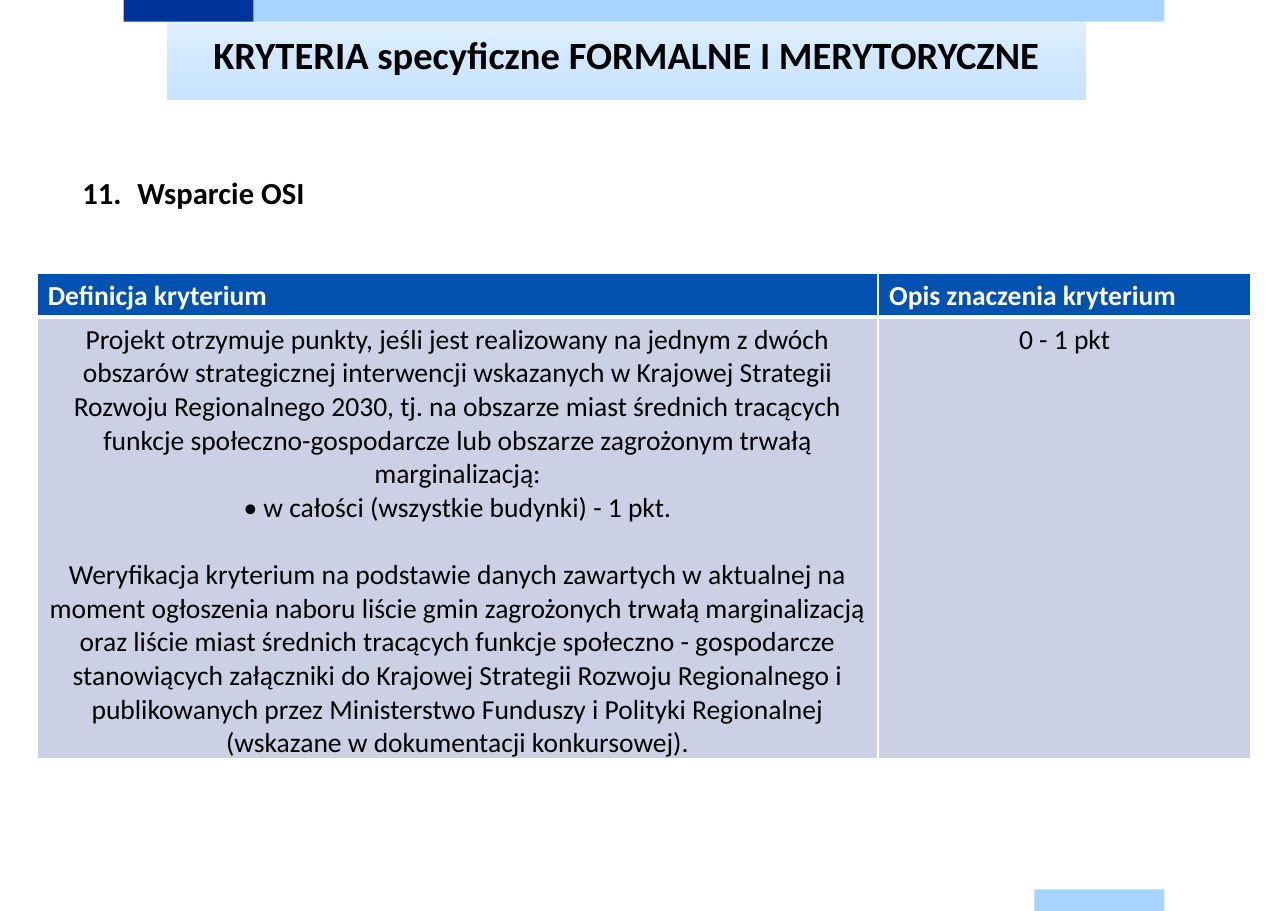
"""Slide with the criterion "Wsparcie OSI": title band, numbered heading and criteria table."""
from copy import deepcopy

from pptx import Presentation
from pptx import util as u
from pptx.dml.color import RGBColor
from pptx.enum import shapes, text
from pptx.oxml import parse_xml
from pptx.oxml.ns import nsdecls, qn

COLOURS = {
    "navy": "003399", "sky": "A6D3FF", "header": "0051B0", "body": "CCD0E4",
    "white": "FFFFFF", "black": "000000",
    "band_top": "E1F0FF", "band_middle": "D0E7FF", "band_bottom": "CAE4FF",
}


def add_run(paragraph, words, size, colour="black", bold=False):
    run = paragraph.add_run()
    run.text = words
    run.font.name = "Calibri"
    run.font.size = u.Pt(size)
    run.font.bold = bold
    run.font.color.rgb = RGBColor.from_string(COLOURS[colour])


def add_bar(left, top, width, height):
    bar = slide.shapes.add_shape(
        shapes.MSO_SHAPE.RECTANGLE, u.Cm(left), u.Cm(top), u.Cm(width), u.Cm(height))
    bar.shadow.inherit = False
    bar.line.fill.background()
    return bar


deck = Presentation()
deck.slide_width, deck.slide_height = u.Cm(29.7), u.Cm(21)
slide = deck.slides.add_slide(deck.slide_layouts[6])

for left, top, width, colour in [
    (2.85, 0, 3, "navy"), (5.85, 0, 21, "sky"), (23.85, 20.5, 3, "sky"),
]:
    strip = add_bar(left, top, width, 0.5)
    strip.fill.solid()
    strip.fill.fore_color.rgb = RGBColor.from_string(COLOURS[colour])

title = add_bar(3.85, 0.5, 21.2, 1.8)
title.fill.gradient()
title.fill.gradient_angle = 270
stop_list = title._element.spPr.find(".//" + qn("a:gsLst"))
stop_list.insert(1, deepcopy(stop_list[0]))
band_colours = ["band_top", "band_middle", "band_bottom"]
for stop, colour, position in zip(title.fill.gradient_stops, band_colours, [0, 0.5, 1]):
    stop.color.rgb = RGBColor.from_string(COLOURS[colour])
    stop.position = position
title_frame = title.text_frame
title_frame.word_wrap = True
title_frame.vertical_anchor = text.MSO_ANCHOR.TOP
title_frame.margin_left = title_frame.margin_right = 0
title_frame.margin_top = title_frame.margin_bottom = 0
title_line = title_frame.paragraphs[0]
title_line.alignment = text.PP_ALIGN.CENTER
title_line.line_spacing = u.Pt(36)
add_run(title_line, "KRYTERIA specyficzne FORMALNE I MERYTORYCZNE", 25.2, bold=True)

heading = slide.shapes.add_textbox(u.Cm(1.65), u.Cm(3.89), u.Cm(26.4), u.Cm(1.2))
heading.text_frame.word_wrap = True
criterion = heading.text_frame.paragraphs[0]
numbering = criterion._p.get_or_add_pPr()
numbering.set("marL", str(u.Cm(1.27)))
numbering.set("indent", str(-u.Cm(1.27)))
numbering.append(parse_xml(
    f'<a:buFont {nsdecls("a")} typeface="+mj-lt"/>'))
numbering.append(parse_xml(
    f'<a:buAutoNum {nsdecls("a")} type="arabicPeriod" startAt="11"/>'))
add_run(criterion, "Wsparcie OSI", 20, bold=True)

definition = [
    "Projekt otrzymuje punkty, jeśli jest realizowany na jednym z dwóch obszarów "
    "strategicznej interwencji wskazanych w Krajowej Strategii Rozwoju Regionalnego 2030, "
    "tj. na obszarze miast średnich tracących funkcje społeczno-gospodarcze lub obszarze "
    "zagrożonym trwałą marginalizacją:",
    "• w całości (wszystkie budynki) - 1 pkt.",
    "Weryfikacja kryterium na podstawie danych zawartych w aktualnej na moment ogłoszenia "
    "naboru liście gmin zagrożonych trwałą marginalizacją oraz liście miast średnich "
    "tracących funkcje społeczno - gospodarcze stanowiących załączniki do Krajowej Strategii "
    "Rozwoju Regionalnego i publikowanych przez Ministerstwo Funduszy i Polityki Regionalnej "
    "(wskazane w dokumentacji konkursowej).",
]
rows = [
    [["Definicja kryterium"], ["Opis znaczenia kryterium"]],
    [definition, ["0 - 1 pkt"]],
]
criteria = slide.shapes.add_table(
    2, 2, u.Cm(0.85), u.Cm(6.3), u.Cm(28), u.Cm(11.18)).table
for column, width in zip(criteria.columns, [19.4, 8.6]):
    column.width = u.Cm(width)
for row, height in zip(criteria.rows, [1, 10.18]):
    row.height = u.Cm(height)

for row_index, row in enumerate(rows):
    is_header = row_index == 0
    for column_index, paragraphs in enumerate(row):
        cell = criteria.cell(row_index, column_index)
        borders = cell._tc.get_or_add_tcPr()
        for side in "LRTB":
            is_divider = (is_header, side) in [(True, "B"), (False, "T")]
            weight = u.Pt(3 if is_divider else 1)
            borders.append(parse_xml(
                f'<a:ln{side} {nsdecls("a")} w="{weight}"><a:solidFill>'
                f'<a:srgbClr val="{COLOURS["white"]}"/></a:solidFill></a:ln{side}>'))
        cell.fill.solid()
        cell.fill.fore_color.rgb = RGBColor.from_string(
            COLOURS["header" if is_header else "body"])
        if not is_header:
            cell.margin_bottom = 0
        for index, words in enumerate(paragraphs):
            frame = cell.text_frame
            paragraph = frame.add_paragraph() if index else frame.paragraphs[0]
            if not is_header:
                paragraph.alignment = text.PP_ALIGN.CENTER
            if index == 2:
                paragraph.space_before = u.Pt(22)
            add_run(paragraph, words, 18, "white" if is_header else "black", is_header)

deck.save("out.pptx")
